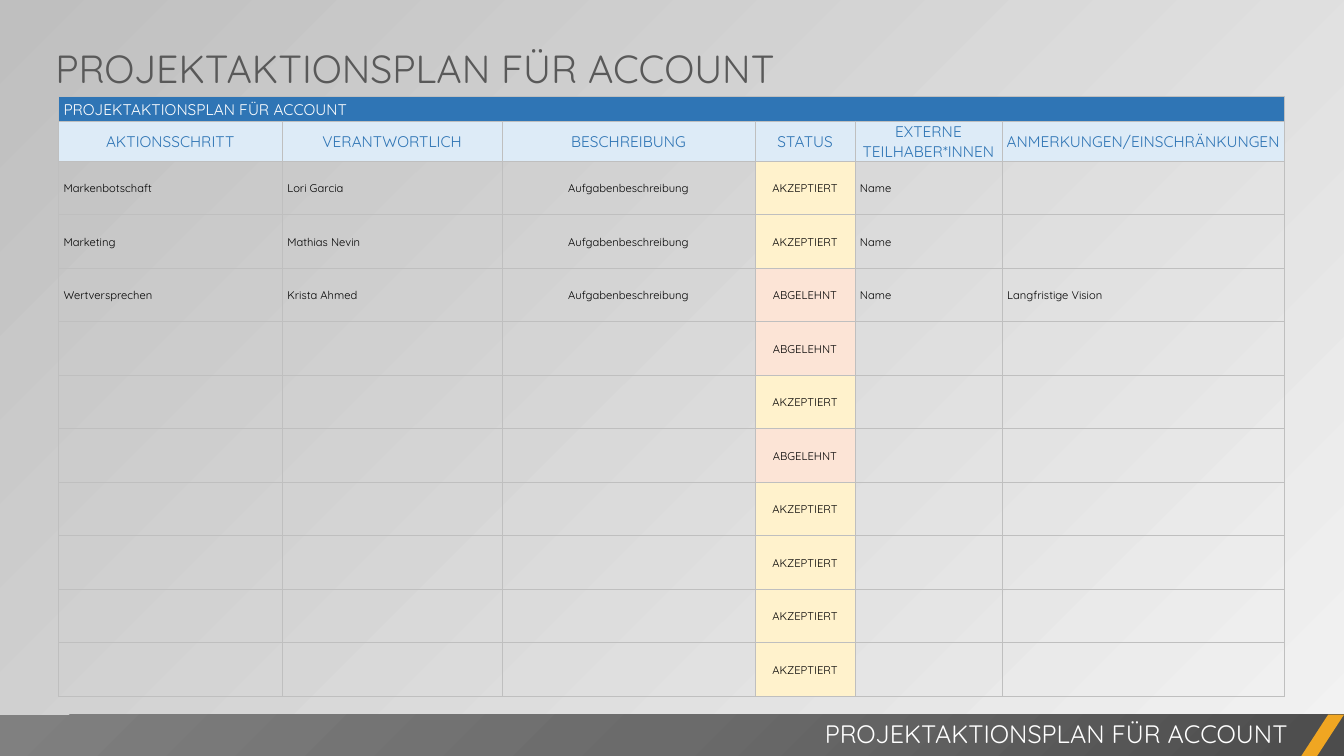
"""Build the account action plan slide with its status table."""
import pptx
import pptx.dml.color
import pptx.enum.shapes
import pptx.enum.text
import pptx.oxml
import pptx.oxml.ns
import pptx.util

Inches = pptx.util.Inches
ALIGN = pptx.enum.text.PP_ALIGN
SHAPE = pptx.enum.shapes.MSO_SHAPE
NS = pptx.oxml.ns.nsdecls("a")
TITLE = "PROJEKTAKTIONSPLAN FÜR ACCOUNT"
HEADS = ["AKTIONSSCHRITT", "VERANTWORTLICH", "BESCHREIBUNG", "STATUS",
         "EXTERNE TEILHABER*INNEN", "ANMERKUNGEN/EINSCHRÄNKUNGEN"]
WIDTHS = [2.22, 2.18, 2.51, 0.99, 1.46, 2.8]
TASK = "Aufgabenbeschreibung"
YES, NO = "AKZEPTIERT", "ABGELEHNT"
TINTS = {YES: "FFF2CC", NO: "FCE4D6"}
STEPS = [
    ["Markenbotschaft", "Lori Garcia", TASK, YES, "Name", ""],
    ["Marketing", "Mathias Nevin", TASK, YES, "Name", ""],
    ["Wertversprechen", "Krista Ahmed", TASK, NO, "Name", "Langfristige Vision"],
]
STEPS += [["", "", "", state, "", ""] for state in [NO, YES, NO, YES, YES, YES, YES]]


def rgb(code):
    return pptx.dml.color.RGBColor.from_string(code)


class Deck:
    font = "Quicksand"
    grid = "BFBFBF"

    def __init__(self):
        self.file = pptx.Presentation()
        self.file.slide_width = Inches(13.33)
        self.file.slide_height = Inches(7.5)
        self.slide = self.file.slides.add_slide(self.file.slide_layouts[6])

    def back(self, start, end, angle):
        fill = self.slide.background.fill
        fill.gradient()
        fill.gradient_angle = angle
        for stop, code in zip(fill.gradient_stops, (start, end)):
            stop.color.rgb = rgb(code)

    def shape(self, kind, box, color):
        item = self.slide.shapes.add_shape(kind, *map(Inches, box))
        item.shadow.inherit = False
        item.line.fill.background()
        item.fill.solid()
        item.fill.fore_color.rgb = rgb(color)
        return item

    def glow(self, item, colors):
        stops = "".join(
            f'<a:gs pos="{100000 * i // (len(colors) - 1)}"><a:srgbClr val="{code}"/></a:gs>'
            for i, code in enumerate(colors))
        grad = pptx.oxml.parse_xml(
            f'<a:gradFill {NS}><a:gsLst>{stops}</a:gsLst><a:path path="circle">'
            '<a:fillToRect l="100000" t="100000"/></a:path></a:gradFill>')
        props = item._element.spPr
        props.replace(props.find(pptx.oxml.ns.qn("a:solidFill")), grad)

    def style(self, frame, size, color, align):
        for para in frame.paragraphs:
            para.alignment = align
            para.font.name = self.font
            para.font.size = pptx.util.Pt(size)
            para.font.color.rgb = rgb(color)

    def text(self, words, box, size, color, align=ALIGN.LEFT):
        frame = self.slide.shapes.add_textbox(*map(Inches, box)).text_frame
        frame.word_wrap = True
        frame.auto_size = pptx.enum.text.MSO_AUTO_SIZE.SHAPE_TO_FIT_TEXT
        frame.text = words
        self.style(frame, size, color, align)

    def table(self, box, widths, heights):
        table = self.slide.shapes.add_table(
            len(heights), len(widths), *map(Inches, box)).table
        table.first_row = table.horz_banding = False
        for col, width in zip(table.columns, widths):
            col.width = Inches(width)
        for row, height in zip(table.rows, heights):
            row.height = Inches(height)
        return table

    def cell(self, cell, words, size, color, fill=None, align=ALIGN.LEFT):
        cell.text = words
        cell.vertical_anchor = pptx.enum.text.MSO_ANCHOR.MIDDLE
        cell.margin_left = Inches(0.05 if align == ALIGN.LEFT else 0.01)
        cell.margin_top = cell.margin_right = Inches(0.01)
        cell.margin_bottom = 0
        self.style(cell.text_frame, size, color, align)
        props = cell._tc.get_or_add_tcPr()
        for side in "LRTB":
            props.append(pptx.oxml.parse_xml(
                f'<a:ln{side} {NS} w="6350"><a:solidFill><a:srgbClr val="{self.grid}"/>'
                f'</a:solidFill></a:ln{side}>'))
        if fill:
            cell.fill.solid()
            cell.fill.fore_color.rgb = rgb(fill)
        else:
            cell.fill.background()


def main():
    deck = Deck()
    deck.back("F2F2F2", "BFBFBF", 135)
    bar = deck.shape(SHAPE.RECTANGLE, (0, 7.09, 13.33, 0.42), "6B6B6B")
    deck.glow(bar, ["4C4C4C", "6B6B6B", "808080"])
    slash = deck.shape(SHAPE.PARALLELOGRAM, (12.9, 7.09, 0.43, 0.42), "F0A622")
    slash.adjustments[0] = 0.65
    deck.text(TITLE, (5.25, 7.08, 7.62, 0.4), 18, "FFFFFF", ALIGN.RIGHT)
    deck.text(TITLE, (0.45, 0.39, 7.85, 0.57), 28, "595959")

    top, head, full = 0.24, 0.4, 5.95
    step = (full - top - head) / len(STEPS)
    plan = deck.table((0.58, 0.96, 12.16, full), WIDTHS,
                      [top, head] + [step] * len(STEPS))
    for col, words in enumerate(HEADS):
        deck.cell(plan.cell(0, col), "" if col else TITLE, 11, "FFFFFF", "2F75B5")
        deck.cell(plan.cell(1, col), words, 11, "2F75B5", "DDEBF7", ALIGN.CENTER)
    plan.cell(0, 0).merge(plan.cell(0, len(HEADS) - 1))
    for row, items in enumerate(STEPS, 2):
        for col, words in enumerate(items):
            align = ALIGN.CENTER if col in (2, 3) else ALIGN.LEFT
            deck.cell(plan.cell(row, col), words, 8, "000000", TINTS.get(words), align)
    deck.file.save("out.pptx")


if __name__ == "__main__":
    main()
